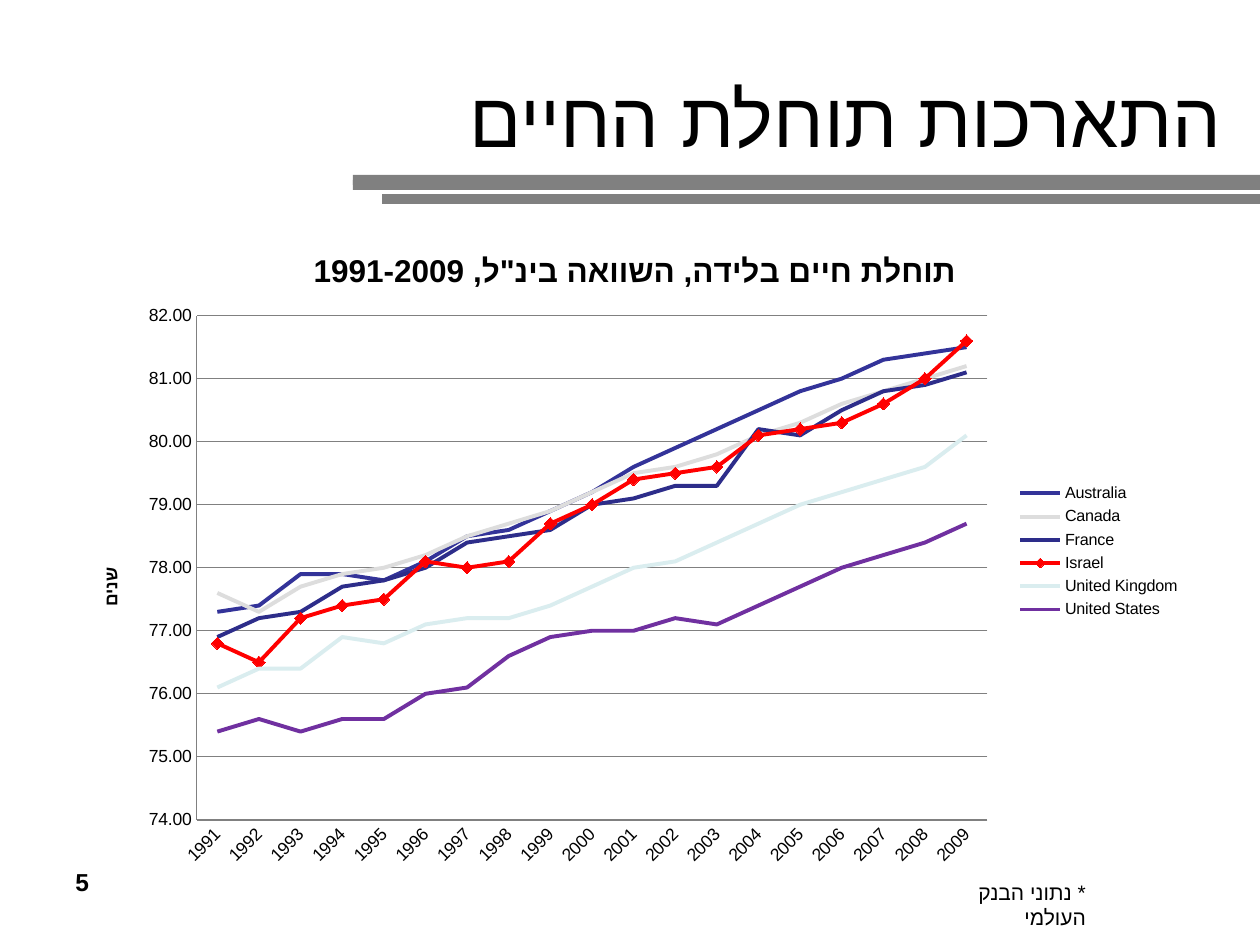
from dataclasses import dataclass

from lxml import etree
from pptx import Presentation
from pptx.chart.data import CategoryChartData
from pptx.dml.color import RGBColor
from pptx.enum.chart import XL_CHART_TYPE, XL_LEGEND_POSITION, XL_MARKER_STYLE, XL_TICK_MARK
from pptx.enum.shapes import MSO_SHAPE
from pptx.enum.text import MSO_ANCHOR, MSO_AUTO_SIZE, PP_ALIGN
from pptx.oxml.ns import qn
from pptx.util import Pt

LINE_CHART = XL_CHART_TYPE.LINE_MARKERS
LEGEND_RIGHT = XL_LEGEND_POSITION.RIGHT
DIAMOND, NO_MARKER = XL_MARKER_STYLE.DIAMOND, XL_MARKER_STYLE.NONE
NO_TICK = XL_TICK_MARK.NONE
RECTANGLE = MSO_SHAPE.RECTANGLE
LEFT, RIGHT = PP_ALIGN.LEFT, PP_ALIGN.RIGHT
TOP, MIDDLE = MSO_ANCHOR.TOP, MSO_ANCHOR.MIDDLE
NO_AUTOFIT = MSO_AUTO_SIZE.NONE
TITLE_ONLY = 5
EMU_PER_PX = 914400 / 126


@dataclass(frozen=True)
class Theme:
    font: str = "Arial"
    text: str = "000000"
    bar: str = "808080"
    title: float = 44
    chart_title: float = 18
    number: float = 14
    note: float = 12
    axis: float = 10
    legend: float = 9.2
    series_line: float = 2.25
    thin_line: float = 0.75


@dataclass(frozen=True)
class Box:
    left: int
    top: int
    width: int
    height: int


@dataclass(frozen=True)
class Country:
    name: str
    color: str
    values: tuple
    marked: bool = False


THEME = Theme()
CHART_BOX = Box(74, 224, 1114, 655)
BARS = (Box(353, 175, 907, 10), Box(382, 194, 878, 5),
        Box(353, 180, 907, 10), Box(382, 199, 878, 5))
YEARS = [str(year) for year in range(1991, 2010)]
COUNTRIES = (
    Country("Australia", "333399", (77.3, 77.4, 77.9, 77.9, 77.8, 78.1, 78.5, 78.6, 78.9, 79.2,
                                    79.6, 79.9, 80.2, 80.5, 80.8, 81, 81.3, 81.4, 81.5)),
    Country("Canada", "DDDDDD", (77.6, 77.3, 77.7, 77.9, 78, 78.2, 78.5, 78.7, 78.9, 79.2,
                                 79.5, 79.6, 79.8, 80.1, 80.3, 80.6, 80.8, 81, 81.2)),
    Country("France", "2D2D8A", (76.9, 77.2, 77.3, 77.7, 77.8, 78, 78.4, 78.5, 78.6, 79,
                                 79.1, 79.3, 79.3, 80.2, 80.1, 80.5, 80.8, 80.9, 81.1)),
    Country("Israel", "FF0000", (76.8, 76.5, 77.2, 77.4, 77.5, 78.1, 78, 78.1, 78.7, 79,
                                 79.4, 79.5, 79.6, 80.1, 80.2, 80.3, 80.6, 81, 81.6), True),
    Country("United Kingdom", "DAEDEF", (76.1, 76.4, 76.4, 76.9, 76.8, 77.1, 77.2, 77.2, 77.4,
                                         77.7, 78, 78.1, 78.4, 78.7, 79, 79.2, 79.4, 79.6, 80.1)),
    Country("United States", "7030A0", (75.4, 75.6, 75.4, 75.6, 75.6, 76, 76.1, 76.6, 76.9, 77,
                                        77, 77.2, 77.1, 77.4, 77.7, 78, 78.2, 78.4, 78.7)),
)


def px(length: int) -> int:
    return round(length * EMU_PER_PX)


def emu(box: Box) -> tuple:
    return px(box.left), px(box.top), px(box.width), px(box.height)


def set_all(target, values: dict) -> None:
    for name, value in values.items():
        setattr(target, name, value)


def style_font(font, size: float, bold: bool = False) -> None:
    set_all(font, {"name": THEME.font, "size": Pt(size), "bold": bold})
    font.color.rgb = RGBColor.from_string(THEME.text)


def write_hebrew(frame, text: str, size: float, bold: bool = False, align=None) -> None:
    """Write one right-to-left paragraph."""
    paragraph = frame.paragraphs[0]
    if align is not None:
        paragraph.alignment = align
    paragraph._p.get_or_add_pPr().set("rtl", "1")
    run = paragraph.add_run()
    run.text = text
    style_font(run.font, size, bold)
    etree.SubElement(run._r.get_or_add_rPr(), qn("a:cs")).set("typeface", THEME.font)


def fill_text_shape(shape, box: Box, text: str, size: float, align,
                    bold: bool = False, anchor=TOP) -> None:
    set_all(shape, dict(zip(("left", "top", "width", "height"), emu(box))))
    set_all(shape.text_frame, {"word_wrap": True, "auto_size": NO_AUTOFIT,
                               "vertical_anchor": anchor})
    write_hebrew(shape.text_frame, text, size, bold, align)


def draw_bar(slide, box: Box) -> None:
    shape = slide.shapes.add_shape(RECTANGLE, *emu(box))
    shape.shadow.inherit = False
    shape.fill.solid()
    shape.fill.fore_color.rgb = RGBColor.from_string(THEME.bar)
    shape.line.fill.background()


def style_line(line, color: str, width: float) -> None:
    line.color.rgb = RGBColor.from_string(color)
    line.width = Pt(width)


def place(element, after: str, inner: bool = False, **fractions: float) -> None:
    """Give a chart part a manual layout, in fractions of the chart."""
    for old in element.findall(qn("c:layout")):
        element.remove(old)
    layout = etree.Element(qn("c:layout"))
    manual = etree.SubElement(layout, qn("c:manualLayout"))
    settings = {"layoutTarget": "inner"} if inner else {}
    settings.update({"xMode": "edge", "yMode": "edge"})
    settings.update(fractions)
    for name, value in settings.items():
        etree.SubElement(manual, qn("c:" + name)).set("val", str(value))
    previous = element.find(qn(after)) if after else None
    element.insert(0 if previous is None else element.index(previous) + 1, layout)


def draw_chart(slide) -> None:
    data = CategoryChartData(number_format="#,##0.00")
    data.categories = YEARS
    for country in COUNTRIES:
        data.add_series(country.name, country.values)
    chart = slide.shapes.add_chart(LINE_CHART, *emu(CHART_BOX), data).chart
    style_font(chart.font, THEME.axis)
    chart.plots[0].vary_by_categories = False
    place(chart._chartSpace.chart.plotArea, "", True, x=0.11, y=0.14, w=0.71, h=0.77)

    # Series
    for series, country in zip(chart.plots[0].series, COUNTRIES):
        series.smooth = False
        style_line(series.format.line, country.color, THEME.series_line)
        series.marker.style = DIAMOND if country.marked else NO_MARKER
        if country.marked:
            series.marker.size = 7
            series.marker.format.fill.solid()
            series.marker.format.fill.fore_color.rgb = RGBColor.from_string(country.color)
            style_line(series.marker.format.line, country.color, THEME.thin_line)

    # Axes
    years, ages = chart.category_axis, chart.value_axis
    for axis in (years, ages):
        set_all(axis, {"major_tick_mark": NO_TICK, "minor_tick_mark": NO_TICK})
        style_font(axis.tick_labels.font, THEME.axis)
        style_line(axis.format.line, THEME.bar, THEME.thin_line)
    years._element.find(qn("c:txPr")).find(qn("a:bodyPr")).set("rot", "-2700000")
    set_all(ages, {"minimum_scale": 74, "maximum_scale": 82, "major_unit": 1,
                   "has_major_gridlines": True})
    set_all(ages.tick_labels, {"number_format": "#,##0.00", "number_format_is_linked": False})
    style_line(ages.major_gridlines.format.line, THEME.bar, THEME.thin_line)

    # Titles and legend
    write_hebrew(chart.chart_title.text_frame, 'תוחלת חיים בלידה, השוואה בינ"ל, 1991-2009',
                 THEME.chart_title, True)
    place(chart.chart_title._element, "c:tx", x=0.21, y=0.03)
    write_hebrew(ages.axis_title.text_frame, "שנים", THEME.axis, True)
    ages.axis_title.text_frame._txBody.find(qn("a:bodyPr")).set("rot", "-5400000")
    place(ages.axis_title._element, "c:tx", x=0.02, y=0.52)
    chart.has_legend = True
    set_all(chart.legend, {"position": LEGEND_RIGHT, "include_in_layout": False})
    style_font(chart.legend.font, THEME.legend)
    place(chart.legend._element, "c:legendPos", x=0.84, y=0.39, w=0.16, h=0.22)


def main() -> None:
    presentation = Presentation()
    set_all(presentation, {"slide_width": px(1260), "slide_height": px(945)})
    slide = presentation.slides.add_slide(presentation.slide_layouts[TITLE_ONLY])

    # Title and rules under it
    fill_text_shape(slide.shapes.title, Box(101, 38, 1134, 157), "התארכות תוחלת החיים",
                    THEME.title, RIGHT, anchor=MIDDLE)
    for bar in BARS:
        draw_bar(slide, bar)

    draw_chart(slide)

    # Page number and source note
    number = slide.shapes.add_textbox(0, 0, 0, 0)
    fill_text_shape(number, Box(63, 861, 294, 66), "5", THEME.number, LEFT, bold=True)
    note = slide.shapes.add_textbox(0, 0, 0, 0)
    fill_text_shape(note, Box(970, 873, 192, 38), "* נתוני הבנק העולמי", THEME.note, RIGHT)
    set_all(note.text_frame, {"margin_left": 0, "margin_right": px(76)})

    presentation.save("out.pptx")


if __name__ == "__main__":
    main()
